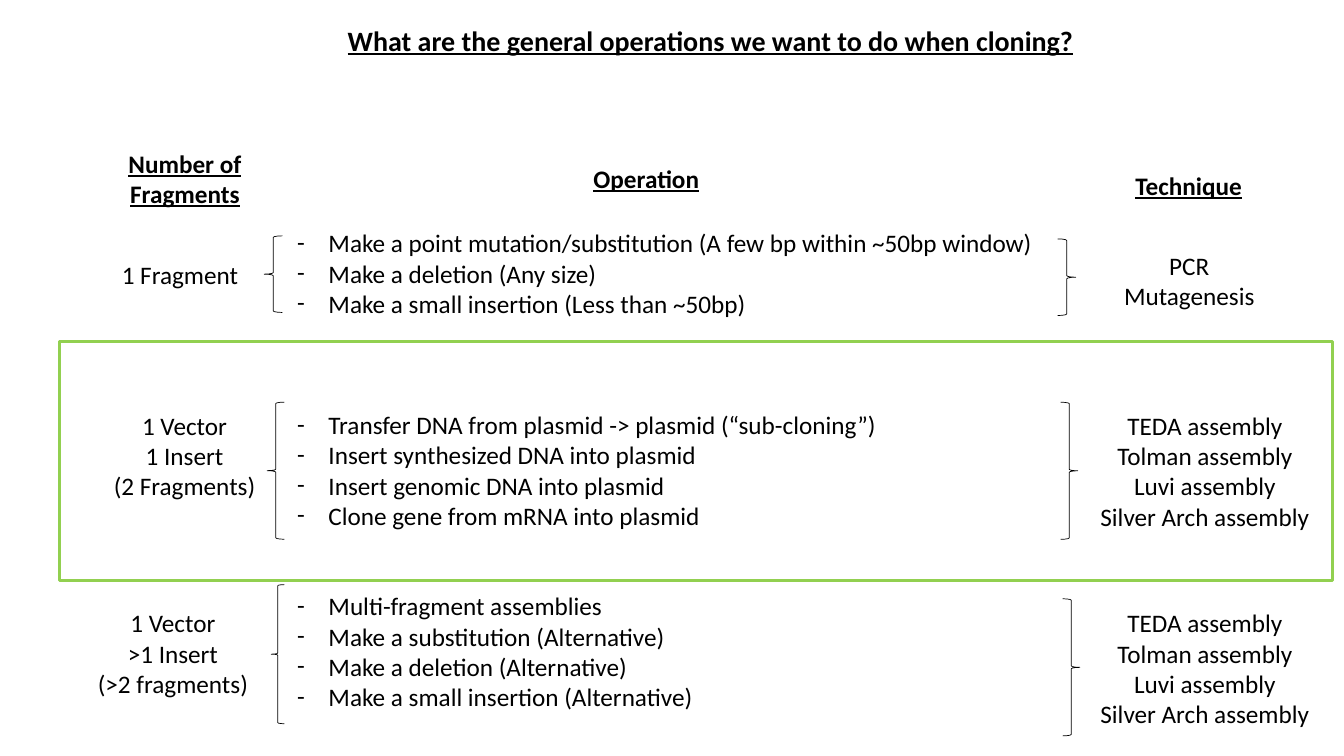
from lxml.etree import SubElement
from pptx import Presentation
from pptx.dml.color import RGBColor
from pptx.enum.shapes import MSO_SHAPE as Shape
from pptx.enum.text import MSO_AUTO_SIZE as AutoSize, PP_ALIGN as Align
from pptx.oxml.ns import qn
from pptx.util import Inches, Pt

BLACK = RGBColor(0x00, 0x00, 0x00)
GREEN = RGBColor(0x92, 0xD0, 0x50)


class CloningSlide:
    """Text style and drawing methods for the current slide."""

    font_name = "Calibri"
    text_size = 18

    def __init__(self, page):
        self.page = page

    def text(self, place, lines, align=Align.CENTER, size=text_size, heading=False, wrap=False):
        box = self.page.shapes.add_textbox(*map(Inches, place))
        frame = box.text_frame
        frame.word_wrap = wrap
        frame.auto_size = AutoSize.SHAPE_TO_FIT_TEXT
        frame.text = "\n".join(lines)
        for para in frame.paragraphs:
            para.alignment = align
            font = para.font
            font.name, font.size = self.font_name, Pt(size)
            font.color.rgb = BLACK
            if heading:
                font.bold = font.underline = True
        return frame

    def bullets(self, place, groups, gaps):
        """One dashed list, with a gap in points ahead of each group."""
        lines = [line for group in groups for line in group]
        frame = self.text(place, lines, Align.LEFT, wrap=True)
        for para in frame.paragraphs:
            properties = para._p.get_or_add_pPr()
            properties.set("marL", str(Inches(0.31)))
            properties.set("indent", str(Inches(-0.31)))
            SubElement(properties, qn("a:buFont"), typeface=self.font_name)
            SubElement(properties, qn("a:buChar"), char="-")
        start = 0
        for group, gap in zip(groups, gaps):
            frame.paragraphs[start].space_before = Pt(gap)
            start += len(group)

    def outline(self, kind, place, color, width):
        shape = self.page.shapes.add_shape(kind, *map(Inches, place))
        shape.shadow.inherit = False
        shape.fill.background()
        shape.line.color.rgb = color
        shape.line.width = Pt(width)
        return shape

    def brace(self, place, rotation=0):
        self.outline(Shape.LEFT_BRACE, place, BLACK, 0.5).rotation = rotation


def main():
    deck = Presentation()
    deck.slide_width, deck.slide_height = Inches(13.33), Inches(7.5)
    slide = CloningSlide(deck.slides.add_slide(deck.slide_layouts[6]))

    # Title and highlighted row
    slide.text((3.35, 0.18, 7.7, 0.44),
               ["What are the general operations we want to do when cloning?"],
               Align.LEFT, size=20, heading=True)
    slide.outline(Shape.RECTANGLE, (0.59, 3.39, 12.63, 2.37), GREEN, 2.25)

    # Column headings
    slide.text((1.17, 1.42, 1.33, 0.71), ["Number of", "Fragments"], heading=True)
    slide.text((5.78, 1.57, 1.26, 0.4), ["Operation"], heading=True)
    slide.text((11.16, 1.64, 1.26, 0.4), ["Technique"], heading=True)

    # Operations
    operations = [
        ["Make a point mutation/substitution (A few bp within ~50bp window)",
         "Make a deletion (Any size)",
         "Make a small insertion (Less than ~50bp)"],
        ["Transfer DNA from plasmid -> plasmid (“sub-cloning”)",
         "Insert synthesized DNA into plasmid",
         "Insert genomic DNA into plasmid",
         "Clone gene from mRNA into plasmid"],
        ["Multi-fragment assemblies",
         "Make a substitution (Alternative)",
         "Make a deletion (Alternative)",
         "Make a small insertion (Alternative)"],
    ]
    slide.bullets((2.85, 2.21, 7.64, 5.25), operations, gaps=(0, 65, 43))

    # Fragment counts
    slide.text((0.91, 2.52, 1.75, 0.4), ["1 Fragment"], wrap=True)
    slide.text((1.02, 4.02, 1.62, 1.01), ["1 Vector", "1 Insert", "(2 Fragments)"])
    slide.text((0.86, 5.98, 1.71, 1.01), ["1 Vector", ">1 Insert", "(>2 fragments)"])

    # Techniques
    slide.text((10.92, 2.43, 1.75, 0.71), ["PCR", "Mutagenesis"], wrap=True)
    assemblies = [f"{name} assembly" for name in ("TEDA", "Tolman", "Luvi", "Silver Arch")]
    for top in (4.02, 5.98):
        slide.text((10.68, top, 2.54, 1.31), assemblies, wrap=True)

    # Braces on both sides of each group
    for place in ((2.62, 2.34, 0.18, 0.76), (2.65, 3.99, 0.17, 1.36), (2.69, 5.8, 0.13, 1.38)):
        slide.brace(place)
    for place in ((10.49, 2.37, 0.18, 0.76), (10.52, 3.99, 0.17, 1.36), (10.54, 5.94, 0.17, 1.36)):
        slide.brace(place, rotation=180)

    deck.save("out.pptx")


if __name__ == "__main__":
    main()
